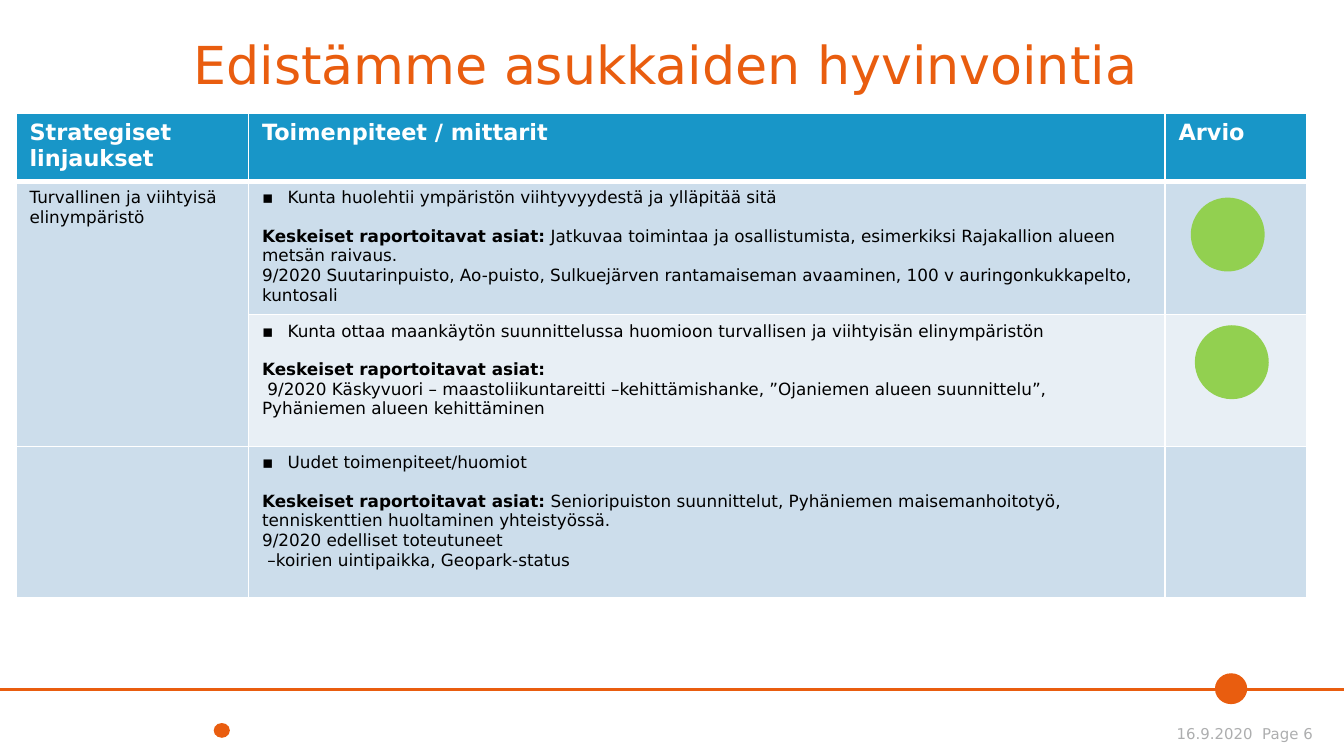
"""Build the slide on residents' wellbeing: an action table with status dots."""
from dataclasses import dataclass

from lxml.etree import SubElement
from pptx import Presentation
from pptx.dml.color import RGBColor
from pptx.enum.shapes import MSO_CONNECTOR, MSO_SHAPE
from pptx.enum.text import MSO_ANCHOR, PP_ALIGN
from pptx.oxml.ns import qn
from pptx.util import Inches, Pt


@dataclass(frozen=True)
class Theme:
    font: str = "DejaVu Sans"
    orange: str = "E95D0F"
    green: str = "92D050"
    grey: str = "ADAEAF"
    header: str = "1896C8"
    band: str = "CCDDEB"
    light: str = "E8EFF5"
    white: str = "FFFFFF"
    black: str = "000000"
    title_size: float = 28
    header_size: float = 12
    body_size: float = 9
    footer_size: float = 8


@dataclass(frozen=True)
class Dot:
    x: float
    y: float
    w: float
    h: float
    color: str


@dataclass(frozen=True)
class Para:
    text: str
    lead: str = ""
    bullet: bool = False
    first: float = 0


@dataclass(frozen=True)
class Row:
    height: float
    fill: str
    goal: str
    actions: tuple[Para, ...]


T = Theme()
REPORT = "Keskeiset raportoitavat asiat:"
HEADINGS = ("Strategiset linjaukset", "Toimenpiteet / mittarit", "Arvio")
COLUMNS = (1.73, 6.82, 1.05)
HEADER_HEIGHT = 0.51
ROWS = (
    Row(0.98, T.band, "Turvallinen ja viihtyisä elinympäristö", (
        Para("Kunta huolehtii ympäristön viihtyvyydestä ja ylläpitää sitä", bullet=True),
        Para("Jatkuvaa toimintaa ja osallistumista, esimerkiksi Rajakallion alueen "
             "metsän raivaus.", lead=REPORT + " "),
        Para("9/2020 Suutarinpuisto, Ao-puisto, Sulkuejärven rantamaiseman avaaminen, "
             "100 v auringonkukkapelto, kuntosali"),
    )),
    Row(0.98, T.light, "", (
        Para("Kunta ottaa maankäytön suunnittelussa huomioon turvallisen ja viihtyisän "
             "elinympäristön", bullet=True),
        Para("", lead=REPORT),
        Para("9/2020 Käskyvuori – maastoliikuntareitti –kehittämishanke, ”Ojaniemen "
             "alueen suunnittelu”, Pyhäniemen alueen kehittäminen", first=0.04),
    )),
    Row(1.13, T.band, "", (
        Para("Uudet toimenpiteet/huomiot", bullet=True),
        Para("Senioripuiston suunnittelut, Pyhäniemen maisemanhoitotyö, tenniskenttien "
             "huoltaminen yhteistyössä.", lead=REPORT + " "),
        Para("9/2020 edelliset toteutuneet"),
        Para("–koirien uintipaikka, Geopark-status", first=0.04),
    )),
)
DOTS = (
    Dot(9.04, 5.01, 0.24, 0.23, T.orange),
    Dot(1.59, 5.38, 0.12, 0.11, T.orange),
    Dot(8.86, 1.47, 0.55, 0.55, T.green),
    Dot(8.89, 2.42, 0.55, 0.55, T.green),
)


def rgb(color: str) -> RGBColor:
    return RGBColor.from_string(color)


def add_text(p, text: str, *, size: float = T.body_size, color: str = T.black,
             bold: bool = False) -> None:
    r = p.add_run()
    r.text = text
    r.font.name = T.font
    r.font.size = Pt(size)
    r.font.bold = bold
    r.font.color.rgb = rgb(color)


def add_box(slide, x: float, y: float, w: float, h: float, text: str, *,
            align: PP_ALIGN, size: float, color: str) -> None:
    tf = slide.shapes.add_textbox(Inches(x), Inches(y), Inches(w), Inches(h)).text_frame
    tf.margin_left = tf.margin_right = tf.margin_top = tf.margin_bottom = 0
    tf.word_wrap = True
    tf.vertical_anchor = MSO_ANCHOR.BOTTOM
    p = tf.paragraphs[0]
    p.alignment = align
    p.line_spacing = 0.9
    add_text(p, text, size=size, color=color)


def add_dot(slide, dot: Dot) -> None:
    sp = slide.shapes.add_shape(MSO_SHAPE.OVAL, Inches(dot.x), Inches(dot.y),
                                Inches(dot.w), Inches(dot.h))
    sp.shadow.inherit = False
    sp.fill.solid()
    sp.fill.fore_color.rgb = rgb(dot.color)
    sp.line.fill.background()


def add_rule(slide, y: float, width: float) -> None:
    line = slide.shapes.add_connector(MSO_CONNECTOR.STRAIGHT, 0, Inches(y),
                                      Inches(width), Inches(y))
    line.line.color.rgb = rgb(T.orange)
    line.line.width = Pt(1.5)
    SubElement(line._element.spPr, qn("a:effectLst"))


def style_cell(cell, fill: str, top: float = 1, bottom: float = 1) -> None:
    tc_pr = cell._tc.get_or_add_tcPr()
    for side, width in (("L", 1), ("R", 1), ("T", top), ("B", bottom)):
        ln = SubElement(tc_pr, qn(f"a:ln{side}"), w=str(Pt(width)))
        solid = SubElement(ln, qn("a:solidFill"))
        SubElement(solid, qn("a:srgbClr"), val=T.white)
    cell.fill.solid()
    cell.fill.fore_color.rgb = rgb(fill)


def write_actions(tf, actions: tuple[Para, ...]) -> None:
    for i, para in enumerate(actions):
        p = tf.add_paragraph() if i else tf.paragraphs[0]
        p_pr = p._p.get_or_add_pPr()
        if para.bullet:
            p_pr.set("marL", str(Inches(0.19)))
            p_pr.set("indent", str(Inches(-0.19)))
            SubElement(p_pr, qn("a:buFont"), typeface=T.font)
            SubElement(p_pr, qn("a:buChar"), char="▪")
            p.space_after = Pt(10)
        elif para.first:
            p_pr.set("indent", str(Inches(para.first)))
        if para.lead:
            add_text(p, para.lead, bold=True)
        if para.text:
            add_text(p, para.text)


def add_action_table(slide, x: float, y: float) -> None:
    heights = (HEADER_HEIGHT, *(row.height for row in ROWS))
    table = slide.shapes.add_table(len(heights), len(COLUMNS), Inches(x), Inches(y),
                                   Inches(sum(COLUMNS)), Inches(sum(heights))).table
    table.horz_banding = False
    for column, width in zip(table.columns, COLUMNS):
        column.width = Inches(width)
    for table_row, height in zip(table.rows, heights):
        table_row.height = Inches(height)
    for cell, heading in zip(table.rows[0].cells, HEADINGS):
        style_cell(cell, T.header, bottom=3)
        add_text(cell.text_frame.paragraphs[0], heading, size=T.header_size,
                 color=T.white, bold=True)
    for i, row in enumerate(ROWS, 1):
        for cell in table.rows[i].cells:
            style_cell(cell, row.fill, top=3 if i == 1 else 1)
        if row.goal:
            add_text(table.cell(i, 0).text_frame.paragraphs[0], row.goal)
        write_actions(table.cell(i, 1).text_frame, row.actions)
    table.cell(1, 0).merge(table.cell(2, 0))


def main() -> None:
    prs = Presentation()
    prs.slide_width = Inches(10)
    prs.slide_height = prs.slide_width * 9 // 16
    slide = prs.slides.add_slide(prs.slide_layouts[6])
    add_rule(slide, 5.13, 10)
    add_box(slide, 6.29, 5.33, 3.48, 0.2, "16.9.2020  Page 6",
            align=PP_ALIGN.RIGHT, size=T.footer_size, color=T.grey)
    add_box(slide, 0.43, 0.04, 9.04, 0.67, "Edistämme asukkaiden hyvinvointia",
            align=PP_ALIGN.CENTER, size=T.title_size, color=T.orange)
    add_action_table(slide, 0.12, 0.84)
    for dot in DOTS:
        add_dot(slide, dot)
    prs.save("out.pptx")


if __name__ == "__main__":
    main()
